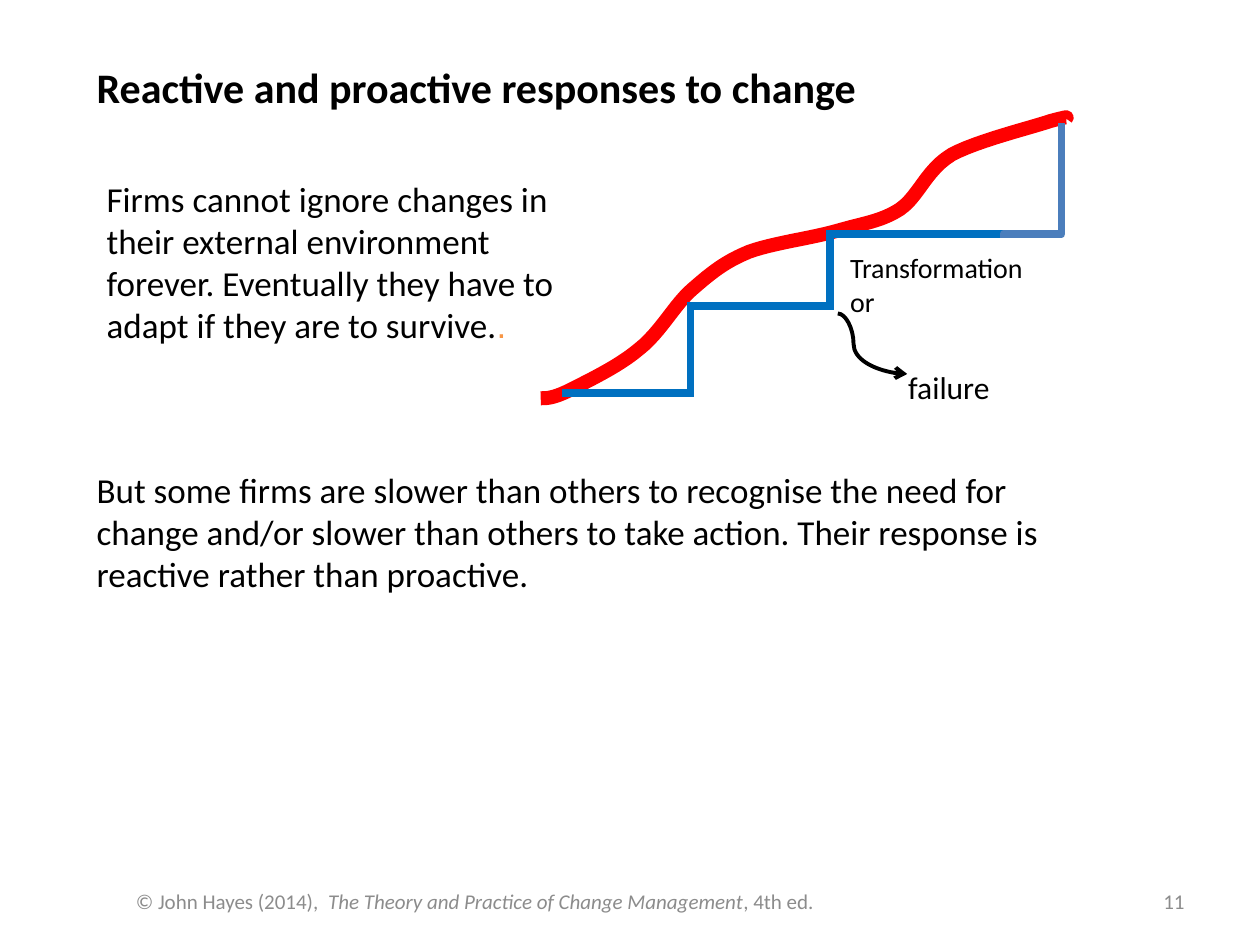
"""Build the slide on reactive and proactive responses to change."""
from lxml.etree import SubElement
from pptx import Presentation
from pptx.dml.color import RGBColor
from pptx.enum.shapes import MSO_CONNECTOR
from pptx.enum.text import MSO_ANCHOR, PP_ALIGN
from pptx.oxml.ns import qn
from pptx.util import Cm, Pt

BLACK = RGBColor(0x00, 0x00, 0x00)
GREY = RGBColor(0x8C, 0x8C, 0x8C)
ORANGE = RGBColor(0xF7, 0x96, 0x46)
RED = RGBColor(0xFF, 0x00, 0x00)
BLUE = RGBColor(0x00, 0x70, 0xC0)
STEEL = RGBColor(0x4B, 0x7E, 0xBC)

PLAIN = {}
BOLD = {"bold": True}
ITALIC = {"italic": True}
ACCENT = {"name": "Arial", "color": ORANGE}

TITLE = [[("Reactive and proactive responses to change", BOLD)]]
PRESSURE = [[("Firms cannot ignore changes in their external environment forever. "
              "Eventually they have to adapt if they are to survive.", PLAIN), (".", ACCENT)]]
DELAY = [[("But some firms are slower than others to recognise the need for change "
           "and/or slower than others to take action. Their response is reactive "
           "rather than proactive.", PLAIN)]]
OUTCOME = [[("Transformation", PLAIN)], [("or", PLAIN)]]
FAILURE = [[("failure", PLAIN)]]
CREDIT = [[("© John Hayes (2014),  ", PLAIN),
           ("The Theory and Practice of Change Management", ITALIC), (", 4th ed.", PLAIN)]]
PAGE = [[("11", PLAIN)]]

BODY_TEXTS = [
    (TITLE, (1.7, 1.12, 21.21, 1.27), 24),
    (PRESSURE, (1.9, 3.45, 10.21, 3.68), 20),
    (DELAY, (1.7, 9.32, 20.8, 2.82), 20),
    (FAILURE, (18.06, 7.29, 3.02, 1.24), 18),
    (OUTCOME, (16.89, 4.93, 4.6, 1.63), 16),
]
FOOTER_TEXTS = [
    (CREDIT, (2.49, 17.65, 19.41, 1.02), PP_ALIGN.LEFT),
    (PAGE, (18.21, 17.65, 5.92, 1.02), PP_ALIGN.RIGHT),
]

ENVIRONMENT_START = (10.9, 8.03)
ENVIRONMENT_CURVES = [
    ((11.02, 8.03), (11.15, 8.03), (11.48, 7.87)),
    ((11.81, 7.7), (12.47, 7.39), (12.88, 7.04)),
    ((13.31, 6.71), (13.61, 6.12), (13.97, 5.82)),
    ((14.35, 5.49), (14.61, 5.28), (15.09, 5.08)),
    ((15.57, 4.9), (16.38, 4.8), (16.89, 4.65)),
    ((17.4, 4.5), (17.75, 4.47), (18.14, 4.22)),
    ((18.52, 3.96), (18.67, 3.43), (19.18, 3.12)),
    ((19.69, 2.84), (20.8, 2.57), (21.18, 2.44)),
    ((21.56, 2.34), (21.51, 2.36), (21.49, 2.39)),
]
CURVE_STEPS = 12

ELBOW, CURVE = MSO_CONNECTOR.ELBOW, MSO_CONNECTOR.CURVE
MITER = ("a:miter", {"lim": "800000"})
ROUND = ("a:round", {})
ARROW = ("a:tailEnd", {"type": "arrow"})
RESPONSES = [
    (ELBOW, (11.33, 7.92, 16.51, 6.17), 50000, 0, BLUE, 4.5, MITER),
    (ELBOW, (15.09, 6.17, 20.27, 4.72), 31600, 0, BLUE, 4.5, MITER),
    (ELBOW, (21.97, 4.22, 19.66, 3.05), 3200, 90, STEEL, 4.5, ROUND),
    (CURVE, (16.89, 6.32, 18.29, 7.54), 22700, 0, BLACK, 2.25, ARROW),
]


def add_text(slide, paragraphs, box, size, color=BLACK, align=PP_ALIGN.LEFT,
             anchor=MSO_ANCHOR.TOP):
    frame = slide.shapes.add_textbox(*map(Cm, box)).text_frame
    frame.word_wrap = True
    frame.vertical_anchor = anchor
    for index, pieces in enumerate(paragraphs):
        paragraph = frame.add_paragraph() if index else frame.paragraphs[0]
        paragraph.alignment = align
        for words, style in pieces:
            run = paragraph.add_run()
            run.text = words
            run.font.size = Pt(size)
            run.font.name = style.get("name", "Calibri")
            run.font.bold = style.get("bold", False)
            run.font.italic = style.get("italic", False)
            run.font.color.rgb = style.get("color", color)


def curve_points(start, curves):
    points = []
    for first, second, end in curves:
        for step in range(1, CURVE_STEPS + 1):
            t = step / CURVE_STEPS
            weights = ((1 - t) ** 3, 3 * t * (1 - t) ** 2, 3 * t * t * (1 - t), t ** 3)
            anchors = (start, first, second, end)
            points.append(tuple(Cm(sum(w * a[axis] for w, a in zip(weights, anchors)))
                                for axis in (0, 1)))
        start = end
    return points


def add_environment(slide):
    builder = slide.shapes.build_freeform(*map(Cm, ENVIRONMENT_START))
    builder.add_line_segments(curve_points(ENVIRONMENT_START, ENVIRONMENT_CURVES), close=False)
    environment = builder.convert_to_shape()
    environment.shadow.inherit = False
    environment.fill.background()
    environment.line.color.rgb = RED
    environment.line.width = Pt(8)


def add_response(slide, kind, ends, bend, turn, color, width, finish):
    response = slide.shapes.add_connector(kind, *map(Cm, ends))
    response.line.color.rgb = color
    response.line.width = Pt(width)
    properties = response._element.spPr
    tag, attributes = finish
    SubElement(properties.find(qn("a:ln")), qn(tag), attributes)
    SubElement(properties, qn("a:effectLst"))
    guides = properties.find(qn("a:prstGeom")).find(qn("a:avLst"))
    SubElement(guides, qn("a:gd"), {"name": "adj1", "fmla": f"val {bend}"})
    if turn:
        properties.find(qn("a:xfrm")).set("rot", str(turn * 60000))


def main():
    deck = Presentation()
    deck.slide_width, deck.slide_height = Cm(25.4), Cm(19.05)
    slide = deck.slides.add_slide(deck.slide_layouts[6])
    add_environment(slide)
    for response in RESPONSES:
        add_response(slide, *response)
    for paragraphs, box, size in BODY_TEXTS:
        add_text(slide, paragraphs, box, size)
    for paragraphs, box, align in FOOTER_TEXTS:
        add_text(slide, paragraphs, box, 12, GREY, align, MSO_ANCHOR.MIDDLE)
    deck.save("out.pptx")


if __name__ == "__main__":
    main()
